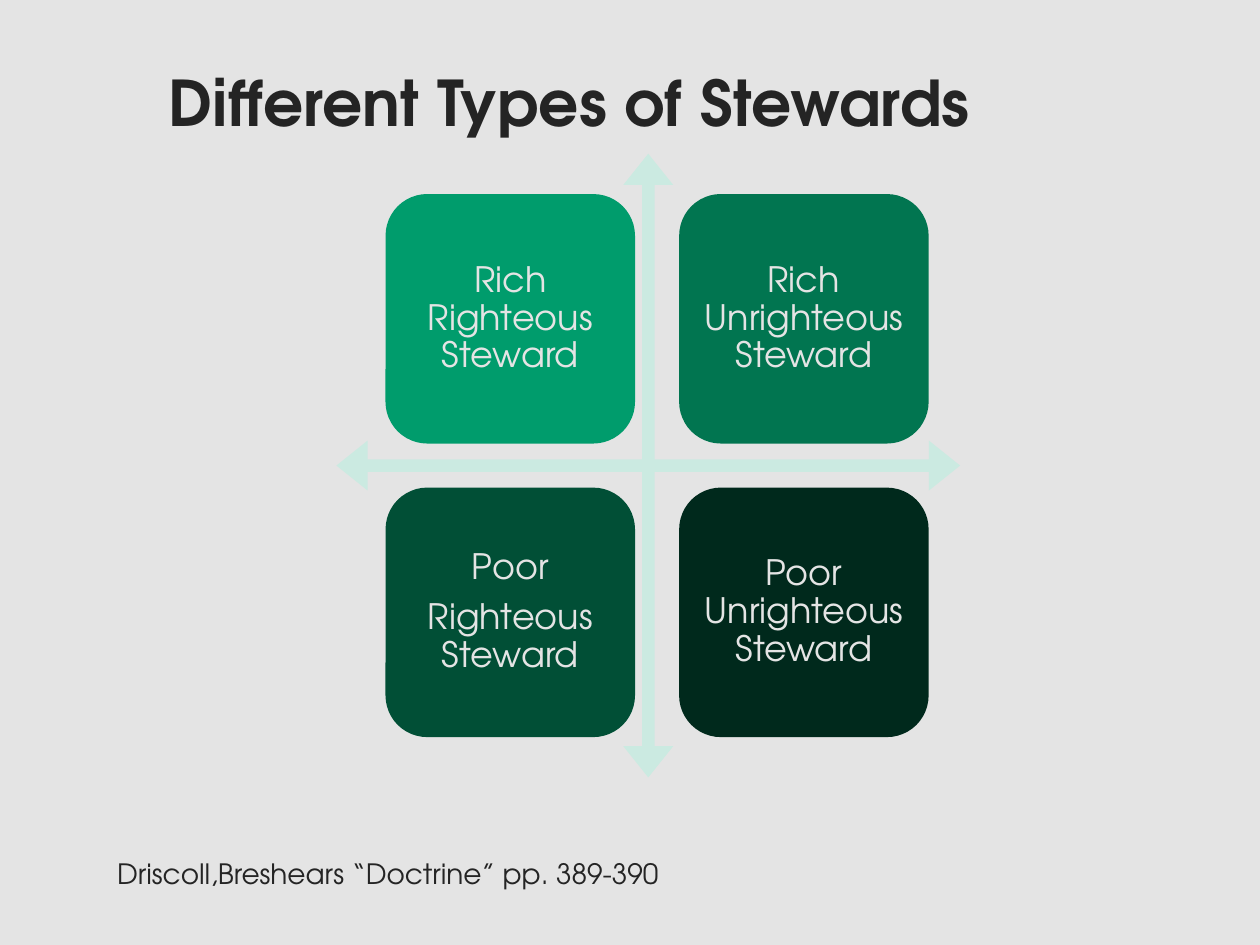
from lxml.etree import SubElement
from pptx import Presentation
from pptx.dml.color import RGBColor
from pptx.enum.shapes import MSO_SHAPE
from pptx.enum.text import MSO_ANCHOR, MSO_AUTO_SIZE, PP_ALIGN
from pptx.oxml.ns import qn
from pptx.util import Inches, Pt

COLORS = {
    "background": "E4E4E4",
    "ink": "242424",
    "axes": "CBEAE1",
    "rich_righteous": "009C6C",
    "rich_unrighteous": "017550",
    "poor_righteous": "014F36",
    "poor_unrighteous": "00291C",
}
FONT = "TeX Gyre Adventor"


def color(name):
    return RGBColor.from_string(COLORS[name])


def write_text(frame, lines, size, ink="ink", bold=False, align=PP_ALIGN.LEFT,
               anchor=MSO_ANCHOR.TOP, spacing=1.0, gap=0, after=0,
               inset=(0.1, 0.05), hanging=None):
    """Fill a text frame, one paragraph per line; gap is the space between."""
    frame.word_wrap = True
    frame.auto_size = MSO_AUTO_SIZE.NONE
    frame.vertical_anchor = anchor
    frame.margin_left = frame.margin_right = Inches(inset[0])
    frame.margin_top = frame.margin_bottom = Inches(inset[1])
    for index, line in enumerate(lines):
        paragraph = frame.paragraphs[0] if index == 0 else frame.add_paragraph()
        paragraph.alignment = align
        paragraph.line_spacing = spacing
        paragraph.space_before = Pt(gap if index else 0)
        paragraph.space_after = Pt(after if index == len(lines) - 1 else 0)
        if hanging is not None:
            properties = paragraph._p.get_or_add_pPr()
            properties.set("marL", str(Inches(hanging)))
            properties.set("indent", str(-Inches(hanging)))
            SubElement(properties, qn("a:buNone"))
        run = paragraph.add_run()
        run.text = line
        run.font.name = FONT
        run.font.size = Pt(size)
        run.font.bold = bold
        run.font.color.rgb = color(ink)


class StewardSlide:
    def __init__(self, deck):
        self.slide = deck.slides.add_slide(deck.slide_layouts[1])
        fill = self.slide.background.fill
        fill.solid()
        fill.fore_color.rgb = color("background")

    def placeholder(self, index, box, text, **style):
        holder = self.slide.placeholders[index]
        holder.left, holder.top, holder.width, holder.height = map(Inches, box)
        write_text(holder.text_frame, [text], **style)

    def shape(self, kind, box, fill, adjustments):
        shape = self.slide.shapes.add_shape(kind, *map(Inches, box))
        shape.shadow.inherit = False
        shape.fill.solid()
        shape.fill.fore_color.rgb = color(fill)
        shape.line.fill.background()
        for index, value in enumerate(adjustments):
            shape.adjustments[index] = value
        return shape

    def axes(self, box):
        self.shape(MSO_SHAPE.QUAD_ARROW, box, "axes", (0.02, 0.04, 0.05))

    def quadrant(self, box, fill, lines):
        tile = self.shape(MSO_SHAPE.ROUNDED_RECTANGLE, box, fill, (0.167,))
        write_text(tile.text_frame, lines, size=20, ink="background",
                   align=PP_ALIGN.CENTER, anchor=MSO_ANCHOR.MIDDLE,
                   spacing=0.9, gap=7, after=7, inset=(0.08, 0.08))


def main():
    deck = Presentation()
    deck.slide_width, deck.slide_height = Inches(10), Inches(7.5)
    stewards = StewardSlide(deck)

    # Title and source reference
    stewards.placeholder(0, (1.24, 0.45, 8.34, 0.7), "Different Types of Stewards",
                         size=36, bold=True, anchor=MSO_ANCHOR.MIDDLE)
    stewards.placeholder(1, (0.83, 6.75, 8.08, 0.5),
                         "Driscoll,Breshears “Doctrine” pp. 389-390",
                         size=16, hanging=0.19)

    # Matrix: crossed axes with a two by two grid of quadrants
    stewards.axes((2.67, 1.22, 4.95, 4.95))
    left, top, side, pitch = 3.06, 1.54, 1.98, 2.33
    quadrants = [
        ("rich_righteous", ["Rich Righteous Steward"]),
        ("rich_unrighteous", ["Rich Unrighteous Steward"]),
        ("poor_righteous", ["Poor", "Righteous Steward"]),
        ("poor_unrighteous", ["Poor Unrighteous Steward"]),
    ]
    for index, (fill, lines) in enumerate(quadrants):
        row, column = divmod(index, 2)
        stewards.quadrant((left + column * pitch, top + row * pitch, side, side),
                          fill, lines)

    deck.save("out.pptx")


if __name__ == "__main__":
    main()
